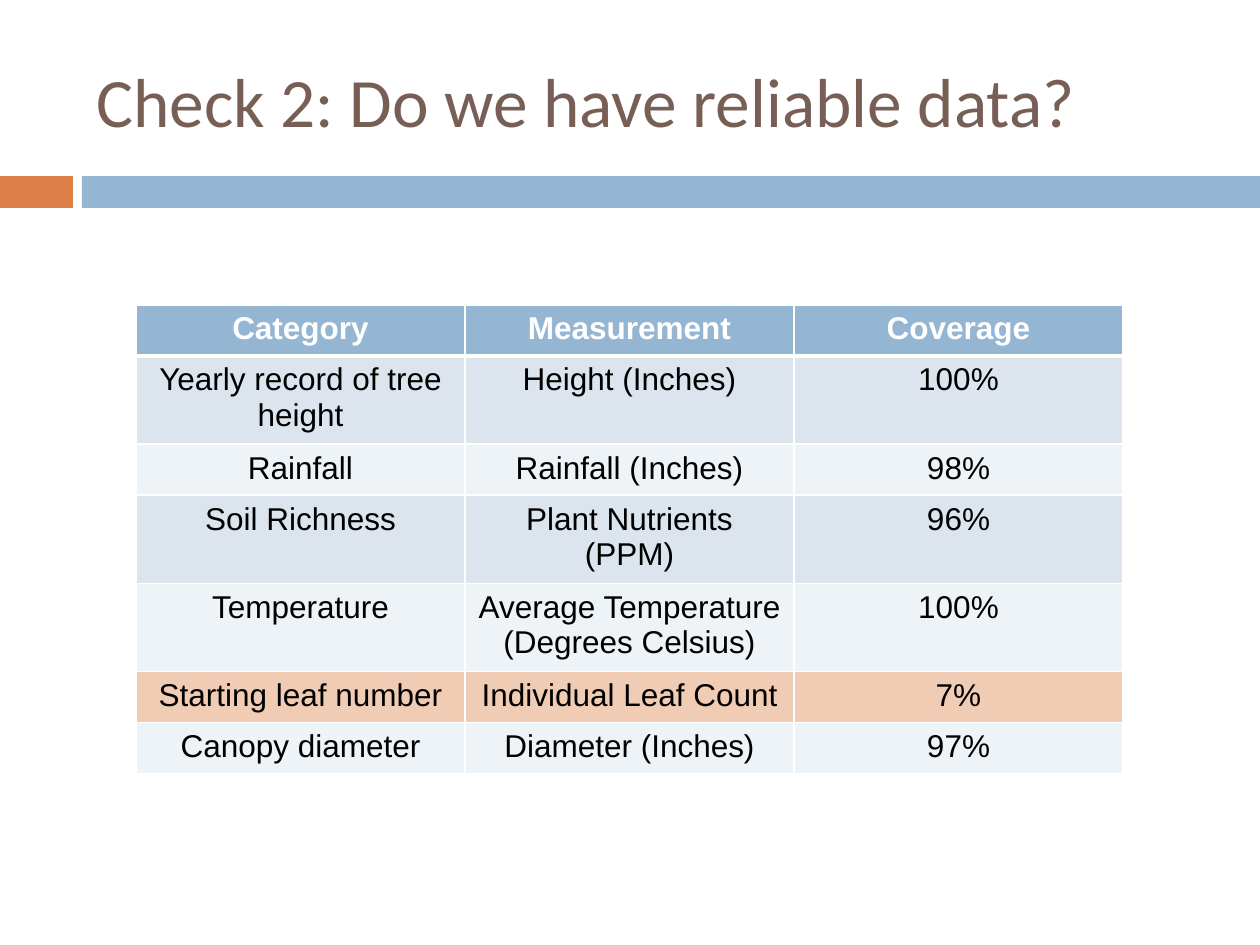
import pptx
import pptx.dml.color
import pptx.enum.shapes
import pptx.enum.text
import pptx.oxml
import pptx.oxml.ns
import pptx.util

PX = 914400 // 126  # EMU per pixel
COLORS = {
    "title": "775F55", "orange": "DD8047", "blue": "94B6D2", "white": "FFFFFF",
    "black": "000000", "band": "DCE5EE", "pale": "EEF3F7", "warning": "F1CCB5",
}
TITLE = {"name": "Calibri", "size": pptx.util.Pt(39.6)}
HEADER = {"name": "Arial", "size": pptx.util.Pt(18), "bold": True}
BODY = {**HEADER, "bold": False}

ROWS = [
    ("Category", "Measurement", "Coverage"),
    ("Yearly record of tree height", "Height (Inches)", "100%"),
    ("Rainfall", "Rainfall (Inches)", "98%"),
    ("Soil Richness", "Plant Nutrients (PPM)", "96%"),
    ("Temperature", "Average Temperature (Degrees Celsius)", "100%"),
    ("Starting leaf number", "Individual Leaf Count", "7%"),
    ("Canopy diameter", "Diameter (Inches)", "97%"),
]
WARNING_ROW = 5


class SlideBuilder:
    def __init__(self, slide):
        self.slide = slide

    def color(self, name):
        return pptx.dml.color.RGBColor.from_string(COLORS[name])

    def place(self, *lengths):
        return [pptx.util.Emu(length * PX) for length in lengths]

    def fill(self, target, name):
        target.fill.solid()
        target.fill.fore_color.rgb = self.color(name)

    def add_text(self, frame, text, style, color):
        para = frame.paragraphs[0]
        span = para.add_run()
        span.text = text
        for key, value in style.items():
            setattr(span.font, key, value)
        span.font.color.rgb = self.color(color)
        return para

    def bar(self, left, top, width, height, color):
        box = self.slide.shapes.add_shape(
            pptx.enum.shapes.MSO_SHAPE.RECTANGLE, *self.place(left, top, width, height))
        box.shadow.inherit = False
        self.fill(box, color)
        box.line.fill.background()

    def title(self, left, top, width, height, text):
        box = self.slide.shapes.add_textbox(*self.place(left, top, width, height))
        frame = box.text_frame
        frame.word_wrap = True
        frame.vertical_anchor = pptx.enum.text.MSO_ANCHOR.MIDDLE
        self.add_text(frame, text, TITLE, "title")

    def border(self, cell, side, points):
        properties = cell._tc.get_or_add_tcPr()
        properties.append(pptx.oxml.parse_xml(
            f'<a:ln{side} {pptx.oxml.ns.nsdecls("a")} w="{pptx.util.Pt(points)}">'
            f'<a:solidFill><a:srgbClr val="{COLORS["white"]}"/></a:solidFill></a:ln{side}>'))

    def table(self, left, top, width, row_height, rows):
        count, columns = len(rows), len(rows[0])
        frame = self.slide.shapes.add_table(
            count, columns, *self.place(left, top, width, row_height * count))
        for r, row in enumerate(rows):
            if r == 0:
                fill, style, color = "blue", HEADER, "white"
            else:
                fill, style, color = ("band" if r % 2 else "pale"), BODY, "black"
            if r == WARNING_ROW:
                fill = "warning"
            # The rule between header and body is thicker
            widths = {"L": 1, "R": 1, "T": 3 if r == 1 else 1, "B": 3 if r == 0 else 1}
            for c, text in enumerate(row):
                cell = frame.table.cell(r, c)
                for side, points in widths.items():
                    self.border(cell, side, points)
                self.fill(cell, fill)
                para = self.add_text(cell.text_frame, text, style, color)
                para.alignment = pptx.enum.text.PP_ALIGN.CENTER


def main():
    deck = pptx.Presentation()
    deck.slide_width = pptx.util.Inches(10)
    deck.slide_height = pptx.util.Inches(7.5)
    builder = SlideBuilder(deck.slides.add_slide(deck.slide_layouts[6]))

    # Accent bars
    builder.bar(0, 176, 73, 32, "orange")
    builder.bar(82, 176, 1178, 32, "blue")

    # Title
    builder.title(84, 32, 1124, 136, "Check 2: Do we have reliable data?")

    # Data coverage
    builder.table(136, 305, 987, 51, ROWS)

    deck.save("out.pptx")


if __name__ == "__main__":
    main()
